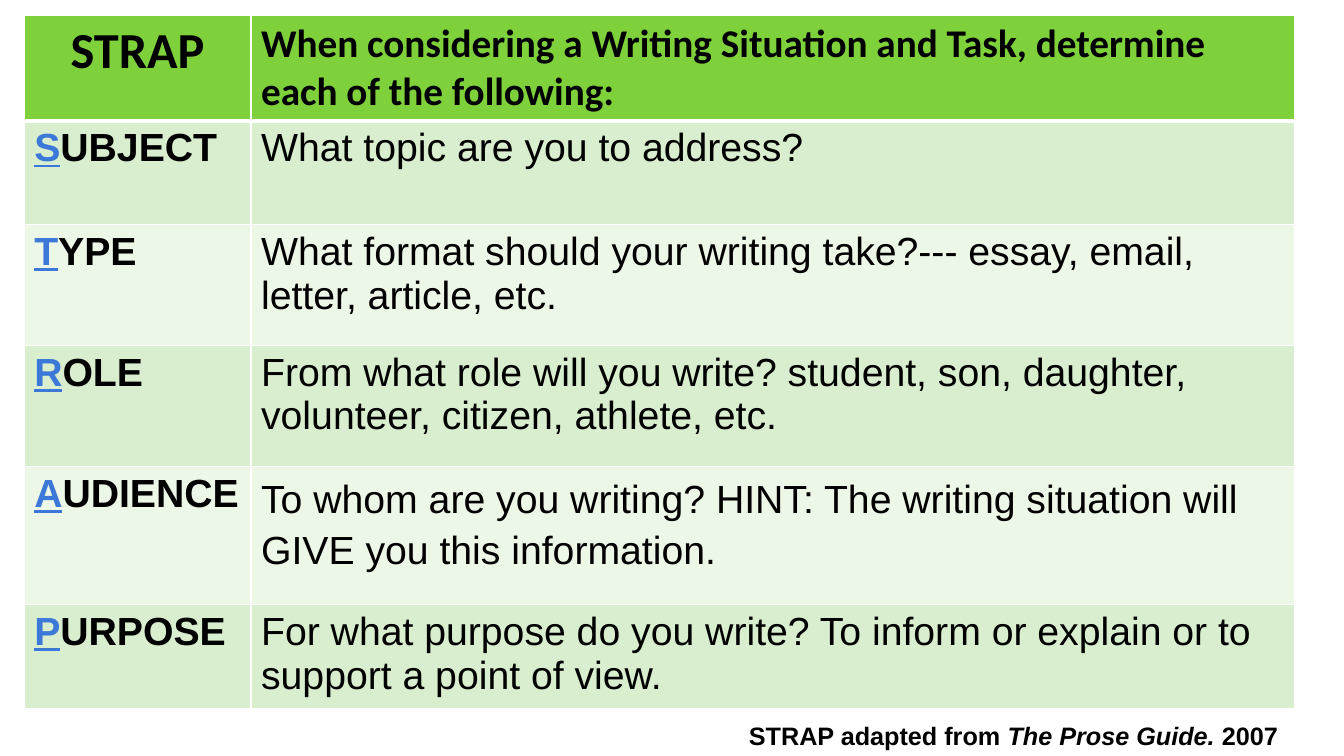
from lxml import etree
from pptx import Presentation, util as u
from pptx.dml.color import RGBColor
from pptx.enum import text
from pptx.oxml import ns

COLORS = {
    "black": "000000",
    "initial": "3C78D8",
    "header": "7FD13B",
    "dark_band": "D8EECE",
    "light_band": "ECF7E8",
    "border": "FFFFFF",
}
HEADING = "When considering a Writing Situation and Task, determine each of the following:"
QUESTIONS = [
    ("SUBJECT", "What topic are you to address?"),
    ("TYPE", "What format should your writing take?--- essay, email, letter, article, etc."),
    ("ROLE", "From what role will you write? student, son, daughter, volunteer, citizen, athlete, etc."),
    ("AUDIENCE", "To whom are you writing? HINT: The writing situation will GIVE you this information."),
    ("PURPOSE", "For what purpose do you write? To inform or explain or to support a point of view."),
]
COLUMN_WIDTHS = [2.25, 10.35]
ROW_HEIGHTS = [1.03, 1.03, 1.2, 1.2, 1.37, 1.03]


def add_text(paragraph, content, size=28, font="Arial", color="black",
             bold=False, italic=False, underline=False):
    """Append a formatted run to a paragraph."""
    run = paragraph.add_run()
    run.text = content
    run.font.size = u.Pt(size)
    run.font.name = font
    run.font.bold = bold
    run.font.italic = italic
    run.font.underline = underline
    run.font.color.rgb = RGBColor.from_string(COLORS[color])


def set_borders(cell, top=1, bottom=1):
    """Draw white borders, with widths in points, around a cell."""
    properties = cell._tc.get_or_add_tcPr()
    for side, width in (("L", 1), ("R", 1), ("T", top), ("B", bottom)):
        line = etree.SubElement(properties, ns.qn(f"a:ln{side}"), w=str(u.Pt(width)))
        fill = etree.SubElement(line, ns.qn("a:solidFill"))
        etree.SubElement(fill, ns.qn("a:srgbClr"), val=COLORS["border"])


def style_row(table, row, fill):
    """Set the borders and fill of each cell in a row."""
    for column in range(len(COLUMN_WIDTHS)):
        cell = table.cell(row, column)
        set_borders(cell, top=3 if row == 1 else 1, bottom=3 if row == 0 else 1)
        cell.fill.solid()
        cell.fill.fore_color.rgb = RGBColor.from_string(COLORS[fill])


def add_strap_table(slide):
    """Add the table of STRAP terms and questions."""
    frame = slide.shapes.add_table(
        len(ROW_HEIGHTS), len(COLUMN_WIDTHS), u.Inches(0.24), u.Inches(0.15),
        u.Inches(sum(COLUMN_WIDTHS)), u.Inches(sum(ROW_HEIGHTS)))
    table = frame.table
    for column, width in zip(table.columns, COLUMN_WIDTHS):
        column.width = u.Inches(width)
    for row, height in zip(table.rows, ROW_HEIGHTS):
        row.height = u.Inches(height)

    style_row(table, 0, "header")
    title, heading = (cell.text_frame.paragraphs[0] for cell in table.rows[0].cells)
    title.alignment = text.PP_ALIGN.CENTER
    add_text(title, "STRAP", size=36, font="Calibri", bold=True)
    add_text(heading, HEADING, font="Calibri", bold=True)

    for row, (term, question) in enumerate(QUESTIONS, start=1):
        style_row(table, row, "dark_band" if row % 2 else "light_band")
        label, answer = (cell.text_frame.paragraphs[0] for cell in table.rows[row].cells)
        add_text(label, term[0], color="initial", bold=True, underline=True)
        add_text(label, term[1:], bold=True)
        add_text(answer, question)
        if term == "AUDIENCE":
            answer.line_spacing = 1.15


def add_citation(slide):
    """Add the line that names where STRAP comes from."""
    shape = slide.shapes.add_textbox(
        u.Inches(7.33), u.Inches(6.83), u.Inches(5.76), u.Inches(0.67))
    frame = shape.text_frame
    frame.word_wrap = True
    frame.vertical_anchor = text.MSO_ANCHOR.BOTTOM
    paragraph = frame.paragraphs[0]
    paragraph.line_spacing = 1.15
    add_text(paragraph, "STRAP adapted from ", size=18, bold=True)
    add_text(paragraph, "The Prose Guide.", size=18, bold=True, italic=True)
    add_text(paragraph, " 2007", size=18, bold=True)


def main():
    """Build and save the STRAP slide."""
    presentation = Presentation()
    presentation.slide_width = u.Inches(13.33)
    presentation.slide_height = u.Inches(7.5)
    slide = presentation.slides.add_slide(presentation.slide_layouts[6])
    add_strap_table(slide)
    add_citation(slide)
    presentation.save("out.pptx")


if __name__ == "__main__":
    main()
